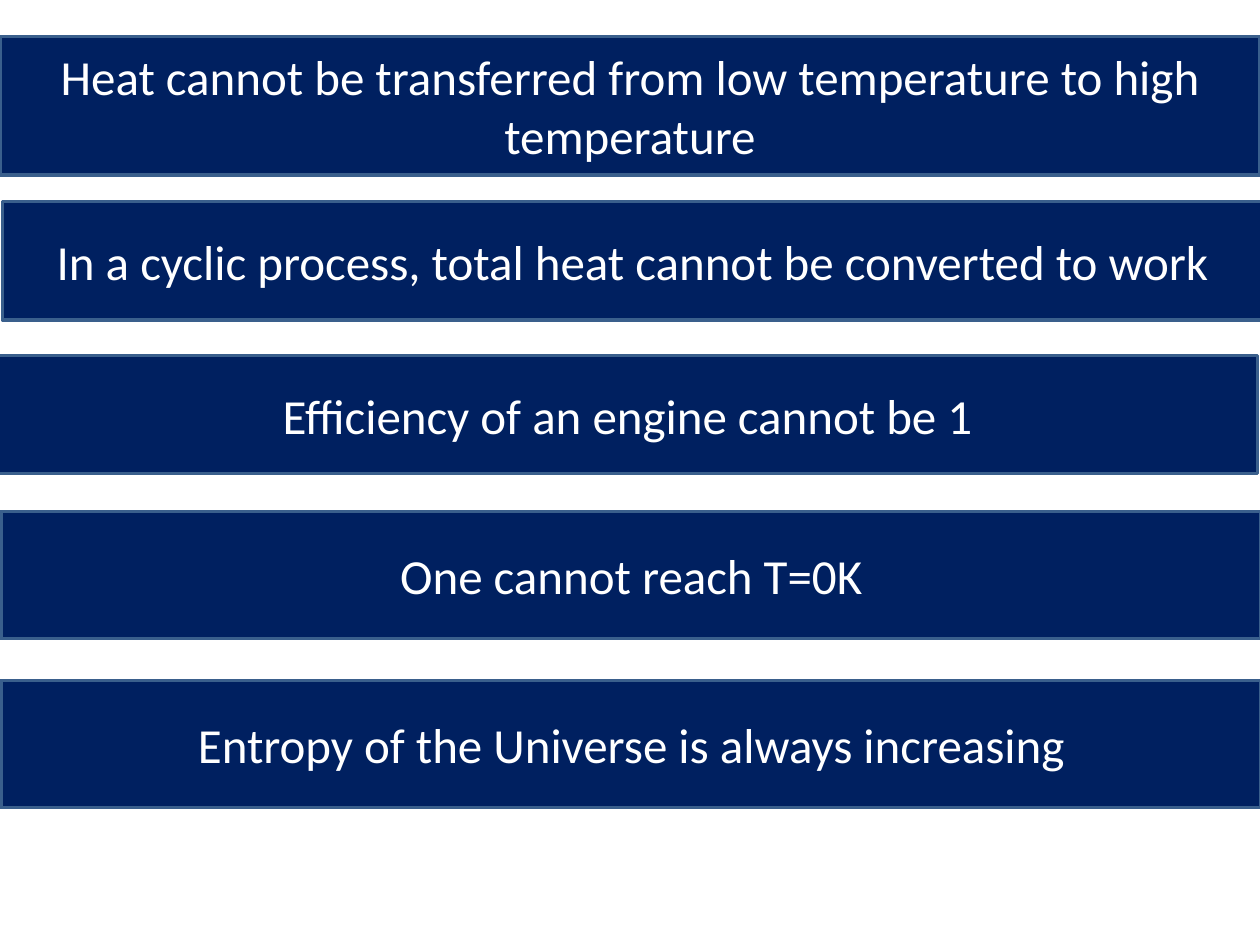
from pptx import Presentation
from pptx.dml.color import RGBColor
from pptx.enum.shapes import MSO_SHAPE
from pptx.enum.text import MSO_ANCHOR, PP_ALIGN
from pptx.util import Inches, Pt

RECTANGLE = MSO_SHAPE.RECTANGLE
MIDDLE = MSO_ANCHOR.MIDDLE
CENTER = PP_ALIGN.CENTER

SLIDE_WIDTH, SLIDE_HEIGHT = 10, 7.5
BLANK_LAYOUT = 6
NAVY, STEEL, WHITE = "002060", "3A5F8C", "FFFFFF"
FONT_FORMAT = {"name": "Calibri", "size": Pt(28)}

# Statement, left, top and height in inches; every band is as wide as the slide.
BANDS = [
    ("Heat cannot be transferred from low temperature to high temperature", 0, 0.29, 1.1),
    ("In a cyclic process, total heat cannot be converted to work", 0.02, 1.6, 0.94),
    ("Efficiency of an engine cannot be 1", -0.02, 2.82, 0.94),
    ("One cannot reach T=0K", 0.01, 4.06, 1.01),
    ("Entropy of the Universe is always increasing", 0.01, 5.4, 1.01),
]


def color(hex_value):
    return RGBColor.from_string(hex_value)


def add_band(page, statement, left, top, height):
    band = page.shapes.add_shape(
        RECTANGLE, Inches(left), Inches(top), Inches(SLIDE_WIDTH), Inches(height)
    )
    band.shadow.inherit = False
    band.fill.solid()
    band.fill.fore_color.rgb = color(NAVY)
    band.line.color.rgb = color(STEEL)
    band.line.width = Pt(2)

    frame = band.text_frame
    frame.word_wrap = True
    frame.vertical_anchor = MIDDLE
    para = frame.paragraphs[0]
    para.alignment = CENTER
    span = para.add_run()
    span.text = statement
    for attribute, value in FONT_FORMAT.items():
        setattr(span.font, attribute, value)
    span.font.color.rgb = color(WHITE)


def main():
    deck = Presentation()
    deck.slide_width = Inches(SLIDE_WIDTH)
    deck.slide_height = Inches(SLIDE_HEIGHT)
    page = deck.slides.add_slide(deck.slide_layouts[BLANK_LAYOUT])
    for band in BANDS:
        add_band(page, *band)
    deck.save("out.pptx")


if __name__ == "__main__":
    main()
